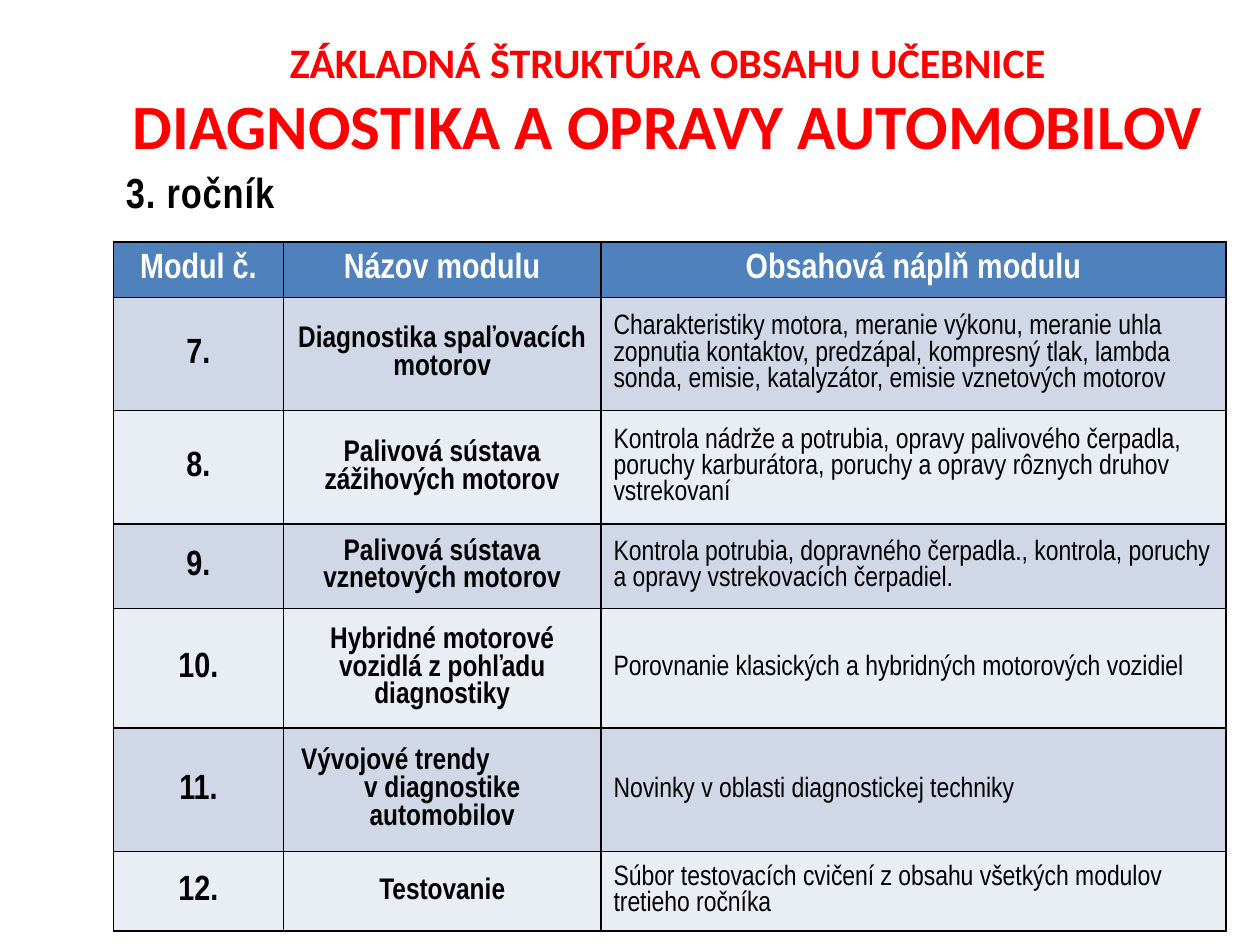
"""Build the slide on the modules of a car repair textbook."""
from dataclasses import dataclass

from lxml.etree import SubElement as Sub
from pptx import Presentation as Deck
from pptx.dml.color import RGBColor as Rgb
from pptx.enum.text import MSO_ANCHOR as Anchor, MSO_AUTO_SIZE as Auto, PP_ALIGN as Align
from pptx.oxml.ns import qn
from pptx.util import Inches, Pt

WIDE, HIGH = 10, 7.5
NARROW = "Arial Narrow"
BLACK, WHITE, RED, BLUE = "000000", "FFFFFF", "FF0000", "4F81BD"
BANDS = "D0D8E8", "E9EDF4"
COLS = 1.35, 2.52, 4.96
HEADS = "Modul č.", "Názov modulu", "Obsahová náplň modulu"


@dataclass
class Module:
    num: int
    name: str
    text: str
    high: float


@dataclass
class Style:
    size: float
    hue: str = BLACK
    face: str = NARROW
    bold: bool = True
    align: Align = Align.CENTER


MODULES = [
    Module(7, "Diagnostika spaľovacích motorov",
           "Charakteristiky motora, meranie výkonu, meranie uhla zopnutia kontaktov, predzápal, "
           "kompresný tlak, lambda sonda, emisie, katalyzátor, emisie vznetových motorov", 0.9),
    Module(8, "Palivová sústava zážihových motorov",
           "Kontrola nádrže a potrubia, opravy palivového čerpadla, poruchy karburátora, "
           "poruchy a opravy rôznych druhov vstrekovaní", 0.9),
    Module(9, "Palivová sústava vznetových motorov",
           "Kontrola potrubia, dopravného čerpadla., kontrola, poruchy a opravy "
           "vstrekovacích čerpadiel.", 0.67),
    Module(10, "Hybridné motorové vozidlá z pohľadu diagnostiky",
           "Porovnanie klasických a hybridných motorových vozidiel", 0.95),
    Module(11, "Vývojové trendy\nv diagnostike automobilov",
           "Novinky v oblasti diagnostickej techniky", 0.98),
    Module(12, "Testovanie",
           "Súbor testovacích cvičení z obsahu všetkých modulov tretieho ročníka", 0.63),
]
HEAD = Style(20, WHITE)
BODY = Style(20), Style(17), Style(16, bold=False, align=Align.LEFT)


def tint(hue: str) -> Rgb:
    """Turn a hex string into a colour."""
    return Rgb.from_string(hue)


def share(x: float, y: float, w: float, h: float) -> list:
    """Turn shares of the slide into lengths."""
    return [Inches(part * side) for part, side in zip((x, y, w, h), (WIDE, HIGH) * 2)]


def dress(par, style: Style) -> None:
    """Give a paragraph its style."""
    par.alignment = style.align
    font = par.font
    font.name, font.size, font.bold = style.face, Pt(style.size), style.bold
    font.color.rgb = tint(style.hue)


def fill_cell(cell, text: str, style: Style, hue: str) -> None:
    """Write one cell with black borders and a plain fill."""
    cell.text_frame.text = text
    for par in cell.text_frame.paragraphs:
        dress(par, style)
    cell.vertical_anchor = Anchor.MIDDLE
    props = cell._tc.get_or_add_tcPr()
    for edge in "LRTB":
        line = Sub(props, qn(f"a:ln{edge}"), w=str(Pt(1)))
        Sub(Sub(line, qn("a:solidFill")), qn("a:srgbClr"), val=BLACK)
    cell.fill.solid()
    cell.fill.fore_color.rgb = tint(hue)


def add_title(slide) -> None:
    """Fill the title with its two lines."""
    title = slide.shapes.title
    title.left, title.top, title.width, title.height = share(0.07, 0.03, 0.92, 0.15)
    frame = title.text_frame
    frame.text = "ZÁKLADNÁ ŠTRUKTÚRA OBSAHU UČEBNICE\nDIAGNOSTIKA A OPRAVY AUTOMOBILOV"
    frame.auto_size, frame.vertical_anchor = Auto.NONE, Anchor.MIDDLE
    for par, size in zip(frame.paragraphs, (24, 36)):
        dress(par, Style(size, RED, "Calibri"))


def add_year(slide) -> None:
    """Add the label of the school year."""
    frame = slide.shapes.add_textbox(*share(0.09, 0.17, 0.26, 0.07)).text_frame
    frame.word_wrap = True
    par = frame.paragraphs[0]
    run = par.add_run()
    run.text = "3. ročník"
    run.font._element.set("spc", "50")
    dress(par, Style(24, align=Align.LEFT))


def add_grid(slide) -> None:
    """Add the table of modules."""
    highs = [0.44] + [mod.high for mod in MODULES]
    place = share(0.09, 0.256, sum(COLS) / WIDE, sum(highs) / HIGH)
    grid = slide.shapes.add_table(len(highs), len(COLS), *place).table
    for col, wide in zip(grid.columns, COLS):
        col.width = Inches(wide)
    for row, high in zip(grid.rows, highs):
        row.height = Inches(high)
    for c, text in enumerate(HEADS):
        fill_cell(grid.cell(0, c), text, HEAD, BLUE)
    for r, mod in enumerate(MODULES):
        for c, text in enumerate((f"{mod.num}.", mod.name, mod.text)):
            fill_cell(grid.cell(r + 1, c), text, BODY[c], BANDS[r % 2])
    trend = grid.cell(5, 1).text_frame.paragraphs[0]
    trend.alignment = Align.LEFT
    trend._p.get_or_add_pPr().set("marL", str(Inches(0.04)))


def main() -> None:
    """Build and save the deck."""
    deck = Deck()
    deck.slide_width, deck.slide_height = Inches(WIDE), Inches(HIGH)
    slide = deck.slides.add_slide(deck.slide_layouts[5])
    add_title(slide)
    add_grid(slide)
    add_year(slide)
    deck.save("out.pptx")


if __name__ == "__main__":
    main()
